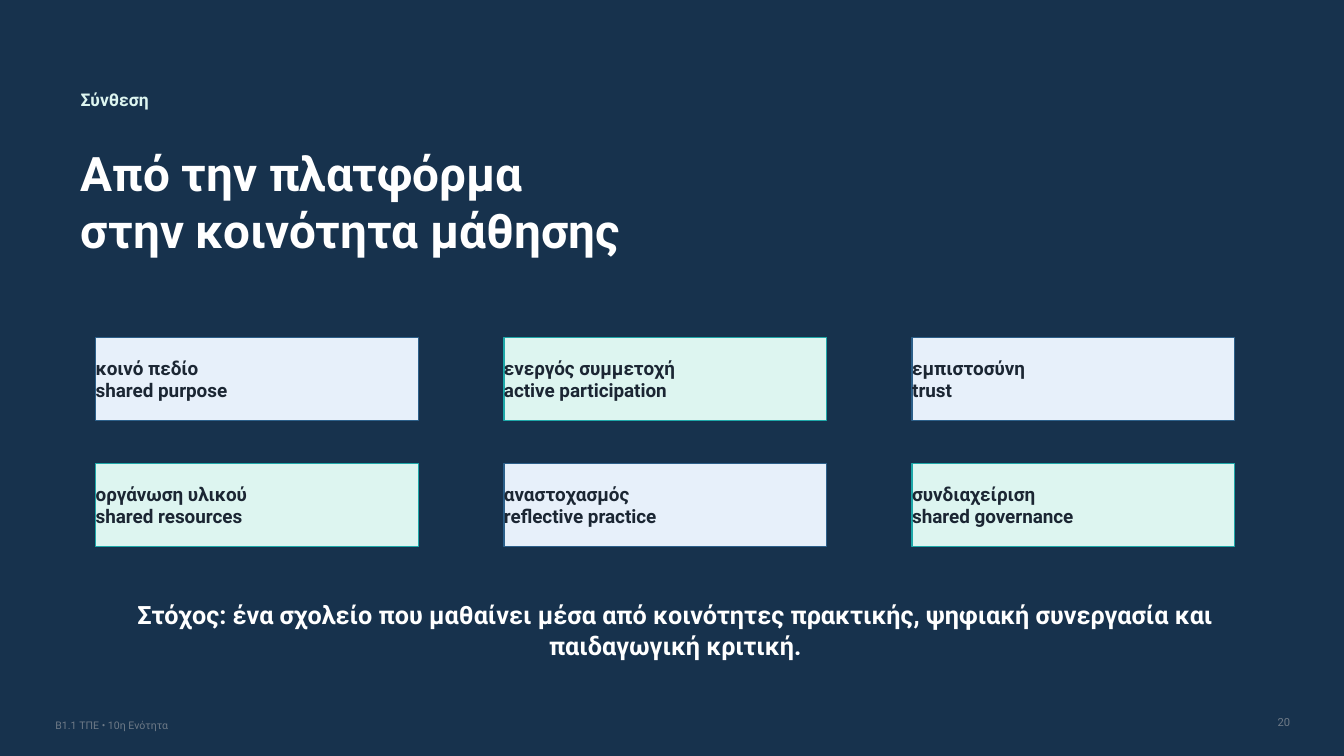
"""Build the closing synthesis slide on learning communities."""
from dataclasses import dataclass

from pptx import Presentation
from pptx import util as u
from pptx.dml import color
from pptx.enum import shapes, text


@dataclass(frozen=True)
class Theme:
    """Colours, font and type sizes of the slide."""
    font: str = "Roboto"
    navy: str = "17324D"
    white: str = "FFFFFF"
    ink: str = "1B2633"
    grey: str = "6E7A87"
    sky: str = "E7F0FA"
    blue: str = "2C5F89"
    mint: str = "DDF5F0"
    teal: str = "1EA7A8"
    title_size: float = 34
    goal_size: float = 18
    card_size: float = 13.5
    kicker_size: float = 12.5
    number_size: float = 8
    footer_size: float = 7.5


class SlideBuilder:
    """Draws themed elements on one page, measured in points."""

    def __init__(self, page, theme):
        """Keep the page and theme, and paint the background."""
        self.page = page
        self.theme = theme
        self.paint(page.background.fill, theme.navy)

    def paint(self, fill, tint):
        """Make a fill solid in one colour."""
        fill.solid()
        fill.fore_color.rgb = color.RGBColor.from_string(tint)

    def set_text(self, box, lines, size, tint, bold=True, align=text.PP_ALIGN.LEFT):
        """Set one paragraph per line, centred vertically without insets."""
        frame = box.text_frame
        frame.word_wrap = True
        frame.auto_size = text.MSO_AUTO_SIZE.NONE
        frame.vertical_anchor = text.MSO_ANCHOR.MIDDLE
        frame.margin_left = frame.margin_right = 0
        frame.margin_top = frame.margin_bottom = 0
        for index, line in enumerate(lines):
            para = frame.add_paragraph() if index else frame.paragraphs[0]
            para.alignment = align
            span = para.add_run()
            span.text = line
            span.font.name = self.theme.font
            span.font.size = u.Pt(size)
            span.font.bold = bold
            span.font.color.rgb = color.RGBColor.from_string(tint)

    def title(self, area, lines):
        """Place and fill the title placeholder."""
        box = self.page.shapes.title
        box.left, box.top, box.width, box.height = map(u.Pt, area)
        self.set_text(box, lines, self.theme.title_size, self.theme.white)

    def label(self, area, line, size, tint, **style):
        """Add a text box with a single paragraph."""
        box = self.page.shapes.add_textbox(*map(u.Pt, area))
        self.set_text(box, [line], size, tint, **style)

    def card(self, area, lines, fill, edge):
        """Add an outlined rectangle with text."""
        box = self.page.shapes.add_shape(shapes.MSO_SHAPE.RECTANGLE, *map(u.Pt, area))
        box.shadow.inherit = False
        self.paint(box.fill, fill)
        self.paint(box.line.fill, edge)
        box.line.width = u.Pt(1)
        self.set_text(box, lines, self.theme.card_size, self.theme.ink)


CARDS = [
    ("κοινό πεδίο", "shared purpose"),
    ("ενεργός συμμετοχή", "active participation"),
    ("εμπιστοσύνη", "trust"),
    ("οργάνωση υλικού", "shared resources"),
    ("αναστοχασμός", "reflective practice"),
    ("συνδιαχείριση", "shared governance"),
]
GOAL = ("Στόχος: ένα σχολείο που μαθαίνει μέσα από κοινότητες πρακτικής, "
        "ψηφιακή συνεργασία και παιδαγωγική κριτική.")


def main():
    """Create the deck and save it."""
    deck = Presentation()
    deck.slide_width, deck.slide_height = u.Pt(960), u.Pt(540)
    theme = Theme()
    builder = SlideBuilder(deck.slides.add_slide(deck.slide_layouts[5]), theme)

    builder.label((57.6, 59, 180, 23.8), "Σύνθεση", theme.kicker_size, theme.mint)
    builder.title((57.6, 97.2, 532.8, 92.2), ["Από την πλατφόρμα", "στην κοινότητα μάθησης"])

    columns = 3
    schemes = [(theme.sky, theme.blue), (theme.mint, theme.teal)]
    for index, lines in enumerate(CARDS):
        row, column = divmod(index, columns)
        area = (68.4 + 291.6 * column, 241.2 + 90 * row, 230.4, 59)
        builder.card(area, lines, *schemes[index % 2])

    builder.label((72, 432, 820.8, 36), GOAL, theme.goal_size, theme.white,
                  align=text.PP_ALIGN.CENTER)
    builder.label((39.6, 509.8, 360, 15.8), "Β1.1 ΤΠΕ • 10η Ενότητα",
                  theme.footer_size, theme.grey, bold=False)
    builder.label((889.2, 506.9, 32.4, 18), "20", theme.number_size, theme.grey,
                  bold=False, align=text.PP_ALIGN.RIGHT)
    deck.save("out.pptx")


if __name__ == "__main__":
    main()
